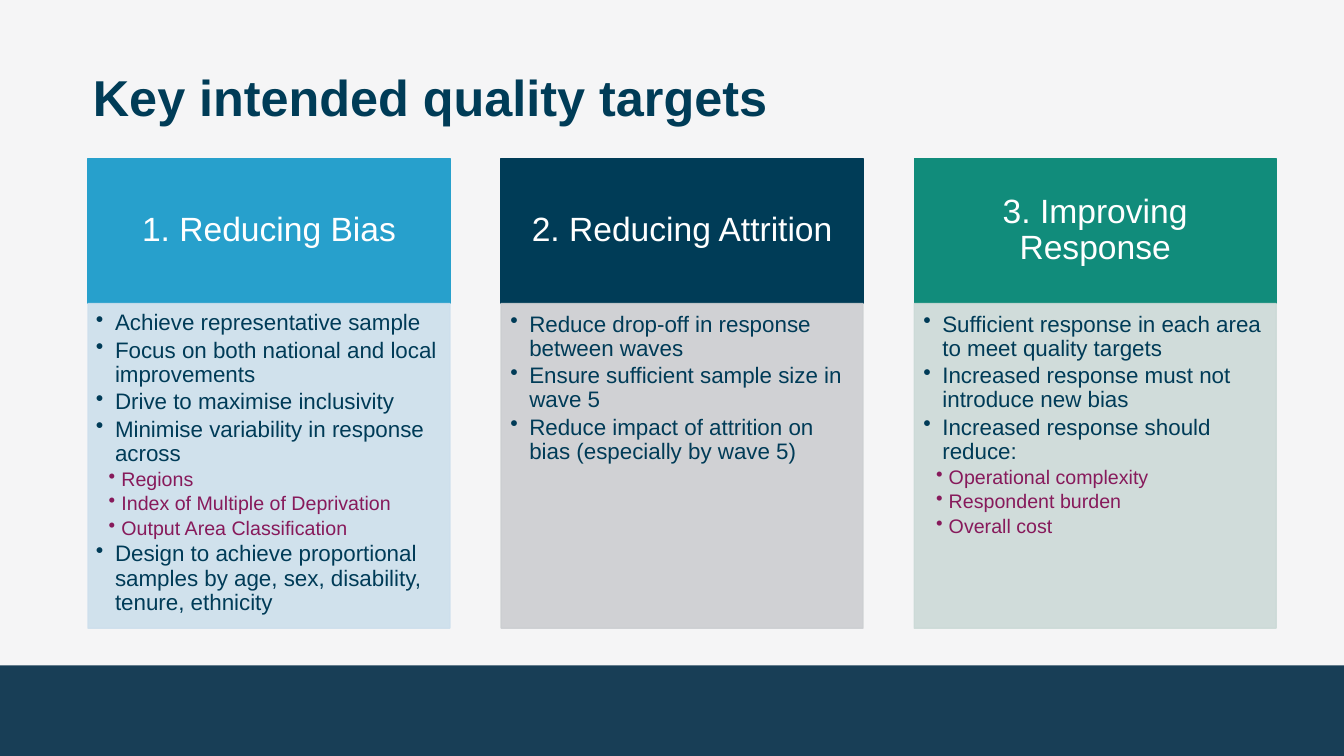
from lxml import etree
from pptx import Presentation
from pptx.dml.color import RGBColor
from pptx.enum.shapes import MSO_SHAPE
from pptx.enum.text import MSO_ANCHOR, MSO_AUTO_SIZE, PP_ALIGN
from pptx.oxml.ns import qn
from pptx.util import Cm, Pt

RECT = MSO_SHAPE.RECTANGLE
TOP, MIDDLE = MSO_ANCHOR.TOP, MSO_ANCHOR.MIDDLE
LEFT, CENTER = PP_ALIGN.LEFT, PP_ALIGN.CENTER
NO_FIT = MSO_AUTO_SIZE.NONE

HEADING = "Key intended quality targets"
NAVY, DARK, PLUM = "003C57", "003B57", "871A5B"
TARGETS = [
    ("1. Reducing Bias", "27A0CC", "CDDFEC", (0.2, 0.2, 0.28, 0.3), [
        (1, "Achieve representative sample"),
        (1, "Focus on both national and local improvements"),
        (1, "Drive to maximise inclusivity"),
        (1, "Minimise variability in response across"),
        (2, "Regions"),
        (2, "Index of Multiple of Deprivation"),
        (2, "Output Area Classification"),
        (1, "Design to achieve proportional samples by age, sex, disability, tenure, ethnicity"),
    ]),
    ("2. Reducing Attrition", NAVY, "CCCED1", (0.23, 0.23, 0.3, 0.36), [
        (1, "Reduce drop-off in response between waves"),
        (1, "Ensure sufficient sample size in wave 5"),
        (1, "Reduce impact of attrition on bias (especially by wave 5)"),
    ]),
    ("3. Improving Response", "118C7B", "CCDAD7", (0.23, 0.23, 0.3, 0.36), [
        (1, "Sufficient response in each area to meet quality targets"),
        (1, "Increased response must not introduce new bias"),
        (1, "Increased response should reduce:"),
        (2, "Operational complexity"),
        (2, "Respondent burden"),
        (2, "Overall cost"),
    ]),
]
LEVELS = {
    1: dict(size=16, color=DARK, indent=0.48, hanging=0.48),
    2: dict(size=14, color=PLUM, indent=0.64, hanging=0.32),
}
SLIDE_W, SLIDE_H = 33.87, 19.05
COLUMN_LEFT, COLUMN_PITCH, COLUMN_W = 2.22, 10.41, 9.12
HEADER_TOP, HEADER_H, BODY_H = 3.99, 3.66, 8.18
BAND_TOP = 16.77


def rgb(value):
    return RGBColor.from_string(value)


def set_frame(frame, insets, anchor):
    frame.word_wrap = True
    frame.auto_size = NO_FIT
    frame.vertical_anchor = anchor
    (frame.margin_left, frame.margin_top,
     frame.margin_right, frame.margin_bottom) = map(Cm, insets)


def write(paragraph, text, *, size, color, bold=False, align=LEFT,
          spacing=0.9, after=0, level=0, indent=0, hanging=0):
    paragraph.alignment = align
    paragraph.line_spacing = spacing
    paragraph.space_before = Pt(0)
    paragraph.space_after = Pt(after)
    paragraph.level = level
    if hanging:
        properties = paragraph._p.get_or_add_pPr()
        properties.set("marL", str(Cm(indent)))
        properties.set("indent", str(-Cm(hanging)))
        etree.SubElement(properties, qn("a:buChar")).set("char", "•")
    run = paragraph.add_run()
    run.text = text
    run.font.name = "Arial"
    run.font.size = Pt(size)
    run.font.bold = bold
    run.font.color.rgb = rgb(color)


def add_block(slide, left, top, width, height, color, outlined=True, opacity=100):
    block = slide.shapes.add_shape(RECT, Cm(left), Cm(top), Cm(width), Cm(height))
    block.shadow.inherit = False
    block.fill.solid()
    block.fill.fore_color.rgb = rgb(color)
    if outlined:
        block.line.color.rgb = rgb(color)
        block.line.width = Pt(1)
    else:
        block.line.fill.background()
    if opacity < 100:
        for tint in block._element.spPr.iter(qn("a:srgbClr")):
            etree.SubElement(tint, qn("a:alpha")).set("val", str(opacity * 1000))
    return block


def main():
    deck = Presentation()
    deck.slide_width, deck.slide_height = Cm(SLIDE_W), Cm(SLIDE_H)
    slide = deck.slides.add_slide(deck.slide_layouts[5])
    slide.background.fill.solid()
    slide.background.fill.fore_color.rgb = rgb("F5F5F6")
    add_block(slide, 0, BAND_TOP, SLIDE_W, SLIDE_H - BAND_TOP, "183E56", outlined=False)

    title = slide.shapes.title
    title.left, title.top, title.width, title.height = map(Cm, (2.34, 1.78, 29.21, 1.47))
    set_frame(title.text_frame, (0, 0, 0, 0), TOP)
    write(title.text_frame.paragraphs[0], HEADING, size=36, color=NAVY,
          bold=True, spacing=0.95)

    for column, (name, strong, pale, insets, points) in enumerate(TARGETS):
        left = COLUMN_LEFT + column * COLUMN_PITCH
        header = add_block(slide, left, HEADER_TOP, COLUMN_W, HEADER_H, strong)
        set_frame(header.text_frame, (0.48, 0.28, 0.48, 0.28), MIDDLE)
        write(header.text_frame.paragraphs[0], name, size=24, color="FFFFFF", align=CENTER)

        body = add_block(slide, left, HEADER_TOP + HEADER_H, COLUMN_W, BODY_H, pale, opacity=90)
        set_frame(body.text_frame, insets, TOP)
        for position, (level, point) in enumerate(points):
            frame = body.text_frame
            paragraph = frame.add_paragraph() if position else frame.paragraphs[0]
            write(paragraph, point, level=level, after=2.3, **LEVELS[level])

    deck.save("out.pptx")


if __name__ == "__main__":
    main()
